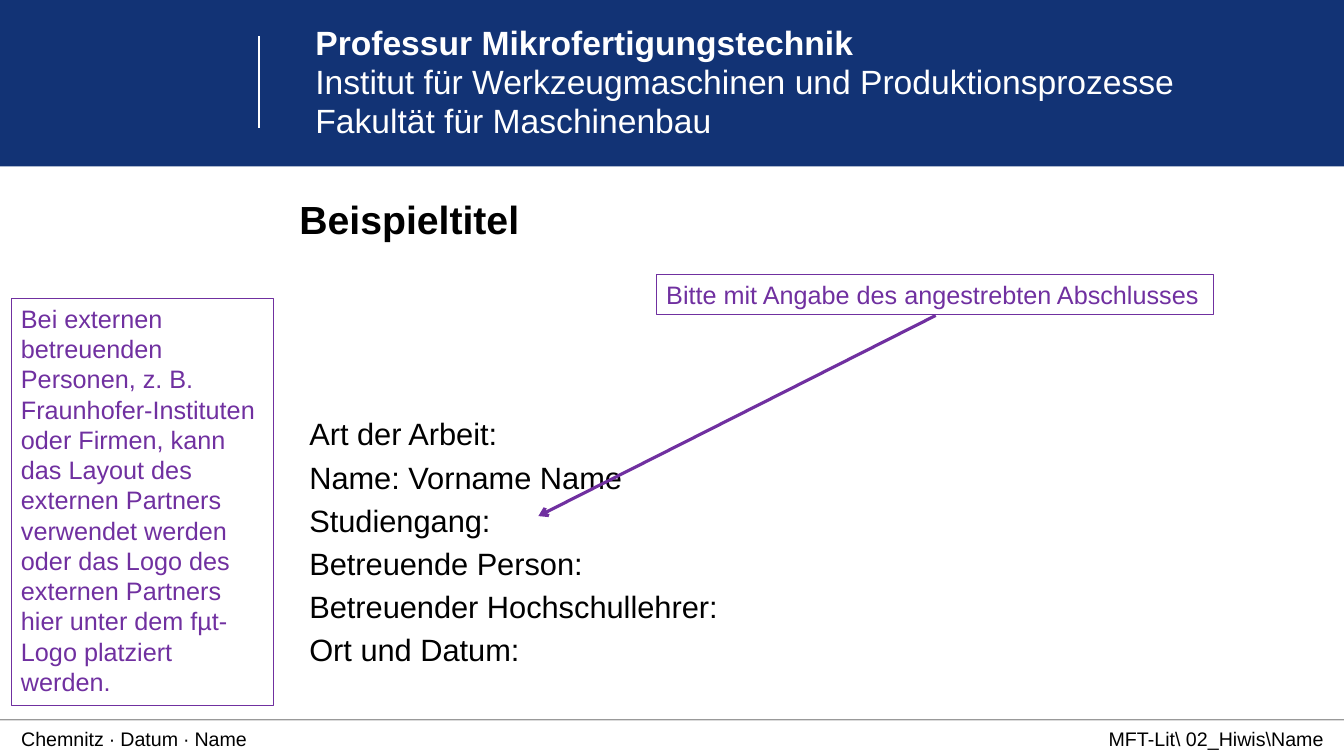
import pptx
import pptx.util
import pptx.dml.color
import pptx.enum.shapes
import pptx.enum.text
import pptx.oxml
import pptx.oxml.ns

Inches = pptx.util.Inches
Pt = pptx.util.Pt
ALIGN = pptx.enum.text.PP_ALIGN
ANCHOR = pptx.enum.text.MSO_ANCHOR
COLORS = {"blue": "123375", "white": "FFFFFF", "black": "000000", "purple": "7030A0"}
HEADER = ["Professur Mikrofertigungstechnik",
          "Institut für Werkzeugmaschinen und Produktionsprozesse",
          "Fakultät für Maschinenbau"]
DETAILS = ["Art der Arbeit:", "Name: Vorname Name", "Studiengang:",
           "Betreuende Person:", "Betreuender Hochschullehrer:", "Ort und Datum:"]
PARTNER_NOTE = ["Bei externen betreuenden Personen, z. B. Fraunhofer-Instituten",
                "oder Firmen, kann das Layout des externen Partners verwendet werden "
                "oder das Logo des externen Partners hier unter dem fµt-Logo platziert werden."]
DEGREE_NOTE = ["Bitte mit Angabe des angestrebten Abschlusses"]


def color(name):
    """Return the named colour."""
    return pptx.dml.color.RGBColor.from_string(COLORS[name])


def add_text(page, box, lines, size, ink="black", bold_lines=0, gap=0, spacing=None,
             align=ALIGN.LEFT, anchor=ANCHOR.TOP, inset=True, wrap=True, border=None):
    """Place paragraphs in a text box and return the box."""
    shape = page.shapes.add_textbox(*map(Inches, box))
    frame = shape.text_frame
    frame.word_wrap = wrap
    frame.vertical_anchor = anchor
    if not inset:
        frame.margin_left = frame.margin_right = frame.margin_top = frame.margin_bottom = 0
    if border:
        shape.line.color.rgb = color(border)
        shape.line.width = Pt(0.75)
    for index, line in enumerate(lines):
        para = frame.paragraphs[0] if index == 0 else frame.add_paragraph()
        para.alignment = align
        if spacing:
            para.line_spacing = spacing
        if index and gap:
            para.space_before = Pt(gap)
        span = para.add_run()
        span.text = line
        span.font.name = "Arial"
        span.font.size = Pt(size)
        span.font.bold = index < bold_lines
        span.font.color.rgb = color(ink)
    return shape


def add_line(page, start, end, ink, width, opacity=None, arrow=False):
    """Draw a straight line, optionally see-through or with an arrowhead."""
    line = page.shapes.add_connector(pptx.enum.shapes.MSO_CONNECTOR.STRAIGHT,
                                     *map(Inches, start + end))
    line.line.color.rgb = color(ink)
    line.line.width = Pt(width)
    outline = line.line._get_or_add_ln()
    qualified = pptx.oxml.ns.qn
    if opacity:
        fill = outline.find(".//" + qualified("a:srgbClr"))
        alpha = pptx.oxml.parse_xml(f'<a:alpha {pptx.oxml.ns.nsdecls("a")} val="{opacity * 1000}"/>')
        fill.append(alpha)
    if arrow:
        outline.append(pptx.oxml.parse_xml(
            f'<a:tailEnd {pptx.oxml.ns.nsdecls("a")} type="arrow"/>'))
    line._element.spPr.append(pptx.oxml.parse_xml(
        f'<a:effectLst {pptx.oxml.ns.nsdecls("a")}/>'))


def add_header(page, left, top, width, height):
    """Build the blue band with divider and institute lines."""
    band = page.shapes.add_shape(pptx.enum.shapes.MSO_SHAPE.RECTANGLE,
                                 *map(Inches, (left, top, width, height)))
    band.shadow.inherit = False
    band.fill.solid()
    band.fill.fore_color.rgb = color("blue")
    band.line.fill.background()
    add_line(page, (left + 2.57, top + 0.36), (left + 2.57, top + 1.27), "white", 1)
    add_text(page, (left + 3.03, top + 0.21, 10.1, 1.3), HEADER, 24, ink="white",
             bold_lines=1, gap=2, spacing=0.9)


def add_footer(page, left, top, width, height):
    """Build the footer rule and its two labels."""
    add_line(page, (left, top), (left + width, top), "black", 1, opacity=40)
    add_text(page, (left + 0.21, top, 6.3, height), ["Chemnitz ∙ Datum ∙ Name"], 14,
             anchor=ANCHOR.MIDDLE, inset=False)
    add_text(page, (left + width - 4.3, top, 4.1, height), ["MFT-Lit\\ 02_Hiwis\\Name"], 14,
             align=ALIGN.RIGHT, anchor=ANCHOR.MIDDLE, inset=False)


def add_body(page, left, top, width, height):
    """Build the title and the list of thesis details."""
    add_text(page, (left, top, width, 0.57), ["Beispieltitel"], 28, bold_lines=1, inset=False)
    add_text(page, (left, top + 2.13, width, height - 2.13), DETAILS, 22, gap=4.4)


def add_notes(page, left, top, width, height):
    """Build the purple hints and the arrow to the degree line."""
    add_text(page, (left, top + 0.24, 2.6, height - 0.24), PARTNER_NOTE, 18,
             ink="purple", border="purple")
    add_text(page, (left + width - 5.53, top, 5.53, 0.4), DEGREE_NOTE, 18,
             ink="purple", border="purple", wrap=False)
    add_line(page, (left + width - 2.76, top + 0.41), (5.34, 5.12), "purple", 2.25, arrow=True)


def main():
    """Build and save the title slide."""
    deck = pptx.Presentation()
    deck.slide_width, deck.slide_height = Inches(13.33), Inches(7.5)
    page = deck.slides.add_slide(deck.slide_layouts[6])
    add_header(page, 0, 0, 13.33, 1.65)
    add_footer(page, 0, 7.14, 13.33, 0.37)
    add_body(page, 2.97, 1.94, 10.04, 4.96)
    add_notes(page, 0.11, 2.72, 11.93, 4.28)
    deck.save("out.pptx")


if __name__ == "__main__":
    main()
